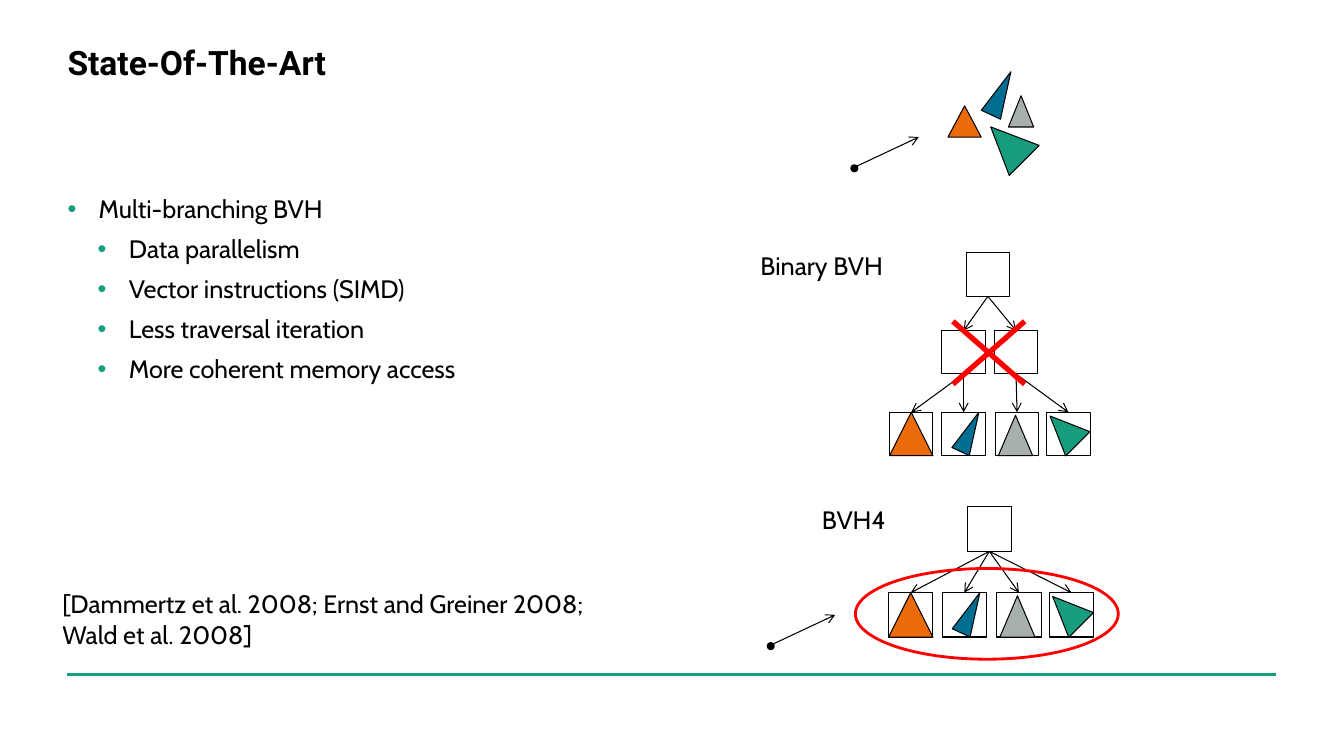
"""Builds a slide comparing a binary BVH with a multi-branching BVH4."""
import pptx
import pptx.dml.color
import pptx.enum.shapes
import pptx.enum.text
import pptx.oxml.ns
import pptx.util
from lxml import etree

Inches = pptx.util.Inches
Pt = pptx.util.Pt
SHAPE = pptx.enum.shapes.MSO_SHAPE
COLORS = {
    "black": "000000", "red": "FF0000", "green": "179C7D",
    "orange": "EB6A0A", "blue": "006E92", "grey": "A8AFAF",
}
SCENE = [
    ("orange", 9.41, 1.05, 0.33, 0.31, 0),
    ("blue", 9.83, 0.69, 0.21, 0.47, 25),
    ("grey", 10.01, 0.95, 0.25, 0.31, 0),
    ("green", 9.79, 1.19, 0.42, 0.47, 315),
]
LEAF_SIZE = 0.43
LEAF_OFFSETS = [0, 0.52, 1.05, 1.56]
LEAF_TRIANGLES = [
    ("orange", 0, 0, 0.43, 0.43, 0),
    ("blue", 0.7, -0.02, 0.19, 0.43, 25),
    ("grey", 1.08, 0.03, 0.34, 0.4, 0),
    ("green", 1.56, -0.02, 0.34, 0.39, 315),
]


class SlideBuilder:
    """Holds the fonts, the line width and the current slide."""

    heading_font = "Roboto"
    body_font = "Cabin"
    thin = 0.75

    def __init__(self, slide):
        self.s = slide

    def color(self, name):
        return pptx.dml.color.RGBColor.from_string(COLORS[name])

    def shape(self, kind, x, y, w, h, fill=None, line=None, width=thin, rotation=0):
        sp = self.s.shapes.add_shape(kind, Inches(x), Inches(y), Inches(w), Inches(h))
        sp.shadow.inherit = False
        sp.rotation = rotation
        if fill:
            sp.fill.solid()
            sp.fill.fore_color.rgb = self.color(fill)
        else:
            sp.fill.background()
        if line:
            sp.line.color.rgb = self.color(line)
            sp.line.width = Pt(width)
        else:
            sp.line.fill.background()
        return sp

    def line(self, start, end, color="black", width=thin, arrow=True):
        x1, y1, x2, y2 = (Inches(v) for v in (*start, *end))
        straight = pptx.enum.shapes.MSO_CONNECTOR.STRAIGHT
        cn = self.s.shapes.add_connector(straight, x1, y1, x2, y2)
        cn.line.color.rgb = self.color(color)
        cn.line.width = Pt(width)
        if arrow:
            ln = cn.line._get_or_add_ln()
            etree.SubElement(ln, pptx.oxml.ns.qn("a:tailEnd"), type="arrow")
        etree.SubElement(cn._element.spPr, pptx.oxml.ns.qn("a:effectLst"))

    def text(self, x, y, w, h, lines, size=18, font=body_font, bold=False,
             inset=True, wrap=True, levels=None):
        box = self.s.shapes.add_textbox(Inches(x), Inches(y), Inches(w), Inches(h))
        tf = box.text_frame
        tf.word_wrap = wrap
        tf.vertical_anchor = pptx.enum.text.MSO_ANCHOR.TOP
        if not inset:
            tf.margin_left = tf.margin_right = tf.margin_top = tf.margin_bottom = 0
        for i, content in enumerate(lines):
            p = tf.add_paragraph() if i else tf.paragraphs[0]
            if levels:
                self.bullet(p, levels[i])
            r = p.add_run()
            r.text = content
            r.font.name = font
            r.font.size = Pt(size)
            r.font.bold = bold
            r.font.color.rgb = self.color("black")

    def bullet(self, p, level):
        qn = pptx.oxml.ns.qn
        p.level = level
        p.space_after = Pt(7)
        pPr = p._p.get_or_add_pPr()
        pPr.set("marL", str(Inches([0.31, 0.61][level])))
        pPr.set("indent", str(Inches(-0.31)))
        clr = etree.SubElement(pPr, qn("a:buClr"))
        etree.SubElement(clr, qn("a:srgbClr"), val=COLORS["green"])
        etree.SubElement(pPr, qn("a:buFont"), typeface="Arial")
        etree.SubElement(pPr, qn("a:buChar"), char="•")

    def triangles(self, items, x=0, y=0, scale=1):
        for fill, dx, dy, w, h, rotation in items:
            self.shape(SHAPE.ISOSCELES_TRIANGLE, x + dx * scale, y + dy * scale,
                       w * scale, h * scale, fill, "black", rotation=rotation)

    def ray(self, x, y):
        self.shape(SHAPE.OVAL, x - 0.04, y - 0.03, 0.08, 0.08, "black")
        self.line((x, y), (x + 0.64, y - 0.3))

    def node(self, x, y, size):
        self.shape(SHAPE.RECTANGLE, x, y, size, size, line="black")
        return x + size / 2, y

    def leaves(self, x, y, size):
        scale = size / LEAF_SIZE
        tops = [self.node(x + dx * scale, y, size) for dx in LEAF_OFFSETS]
        self.triangles(LEAF_TRIANGLES, x, y, scale)
        return tops

    def branches(self, top, size, children):
        for child in children:
            self.line((top[0], top[1] + size), child)

    def binary_tree(self):
        size = LEAF_SIZE
        leaves = self.leaves(8.83, 4.09, size)
        inner = [self.node(x, 3.28, size) for x in (9.35, 9.87)]
        root = self.node(9.59, 2.51, size)
        self.branches(root, size, inner)
        self.branches(inner[0], size, leaves[:2])
        self.branches(inner[1], size, leaves[2:])
        self.text(7.45, 2.43, 1.51, 0.4, ["Binary BVH"], wrap=False)

    def wide_tree(self):
        size = 0.44
        leaves = self.leaves(8.82, 5.88, size)
        root = self.node(9.6, 5.03, size)
        self.branches(root, size, leaves)
        self.text(8.06, 4.95, 1.26, 0.6, ["BVH4"], wrap=False)


def main():
    prs = pptx.Presentation()
    prs.slide_width = Inches(13.34)
    prs.slide_height = Inches(7.5)
    s = SlideBuilder(prs.slides.add_slide(prs.slide_layouts[6]))

    s.line((0.67, 6.69), (12.67, 6.69), "green", 2.5, arrow=False)
    s.text(0.67, 0.42, 11.99, 0.4, ["State-Of-The-Art"], 24, s.heading_font,
           bold=True, inset=False)
    s.text(0.67, 1.92, 11.99, 2, [
        "Multi-branching BVH",
        "Data parallelism",
        "Vector instructions (SIMD)",
        "Less traversal iteration",
        "More coherent memory access",
    ], inset=False, levels=[0, 1, 1, 1, 1])

    s.ray(8.48, 1.66)
    s.triangles(SCENE)
    s.binary_tree()
    s.wide_tree()

    cross = s.shape(SHAPE.MATH_MULTIPLY, 9.13, 2.9, 1.37, 1.2, "red")
    cross.adjustments[0] = 0.044
    s.shape(SHAPE.OVAL, 8.49, 5.64, 2.61, 0.9, line="red", width=2)
    s.ray(7.65, 6.4)
    s.text(0.52, 5.79, 6.67, 0.71, [
        "[Dammertz et al. 2008; Ernst and Greiner 2008;",
        "Wald et al. 2008]",
    ])
    prs.save("out.pptx")


if __name__ == "__main__":
    main()
